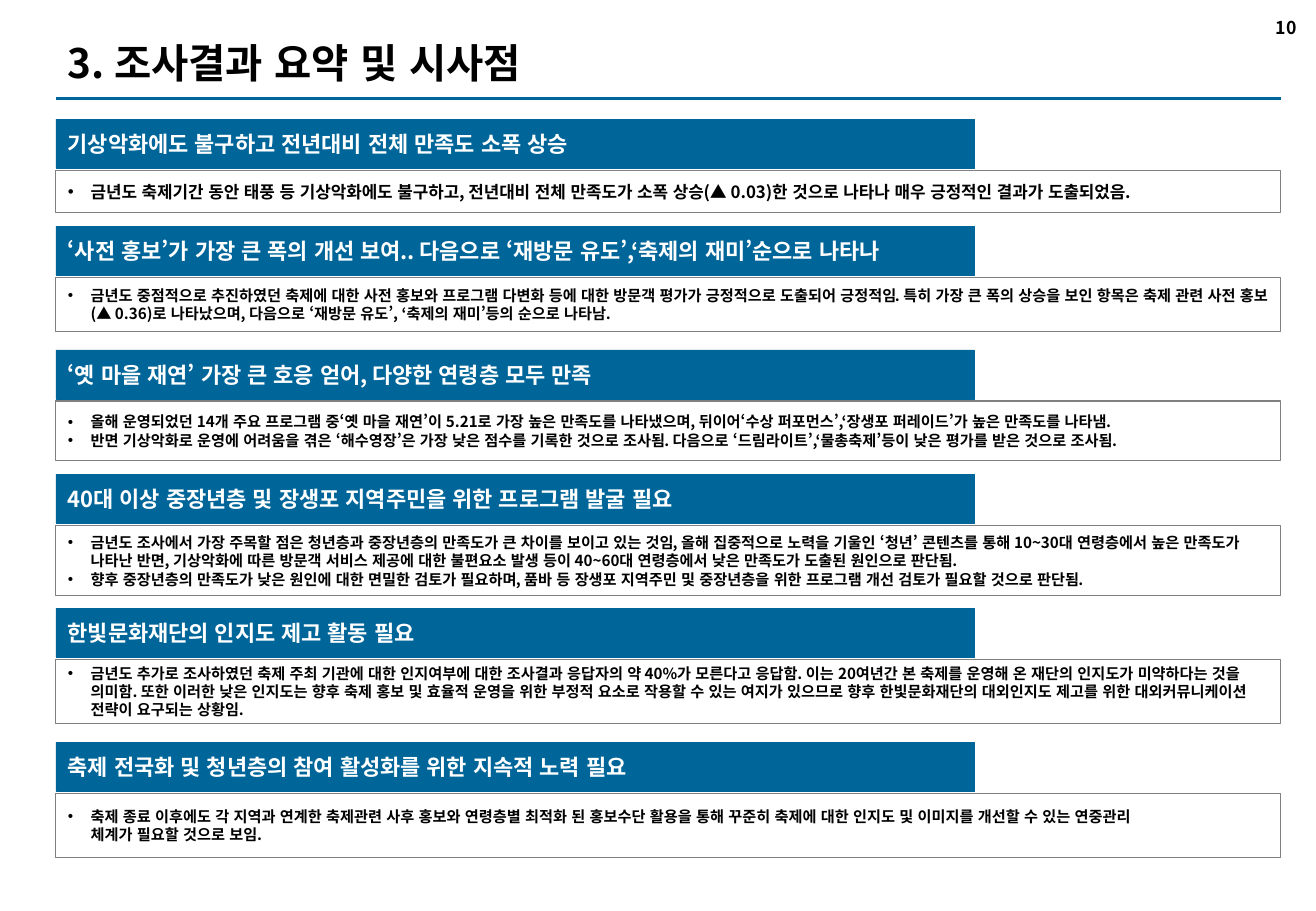
"""Build the survey summary slide with its six findings."""
from dataclasses import dataclass

from lxml import etree
from pptx import Presentation
from pptx.dml.color import RGBColor
from pptx.enum.lang import MSO_LANGUAGE_ID
from pptx.enum.shapes import MSO_CONNECTOR, MSO_SHAPE
from pptx.enum.text import MSO_ANCHOR, PP_ALIGN
from pptx.oxml.ns import qn
from pptx.util import Pt

RECTANGLE = MSO_SHAPE.RECTANGLE
STRAIGHT = MSO_CONNECTOR.STRAIGHT
MIDDLE = MSO_ANCHOR.MIDDLE
LEFT = PP_ALIGN.LEFT
CENTER = PP_ALIGN.CENTER
KOREAN = MSO_LANGUAGE_ID.KOREAN

FONT = "Noto Sans CJK KR"
COLORS = {"blue": "006699", "gray": "808080", "black": "000000", "white": "FFFFFF"}
SLIDE_WIDTH, SLIDE_HEIGHT = 779.8, 540
MARGIN = 33.1
CONTENT_WIDTH = 725.8
HEADING_WIDTH, HEADING_HEIGHT = 544.3, 29.2
BODY_OFFSET = 30.3
BULLET_INDENT = 13.5


@dataclass(frozen=True)
class Finding:
    top: float
    body_height: float
    heading: str
    bullets: tuple[str, ...]
    body_size: float = 9


FINDINGS = (
    Finding(70.7, 25.2, "기상악화에도 불구하고 전년대비 전체 만족도 소폭 상승", (
        "금년도 축제기간 동안 태풍 등 기상악화에도 불구하고, 전년대비 전체 만족도가 소폭 상승"
        "(▲ 0.03)한 것으로 나타나 매우 긍정적인 결과가 도출되었음.",
    ), 10),
    Finding(134, 32.4, "‘사전 홍보’가 가장 큰 폭의 개선 보여.. 다음으로 ‘재방문 유도’,‘축제의 재미’순으로 나타나", (
        "금년도 중점적으로 추진하였던 축제에 대한 사전 홍보와 프로그램 다변화 등에 대한 방문객 평가가 "
        "긍정적으로 도출되어 긍정적임. 특히 가장 큰 폭의 상승을 보인 항목은 축제 관련 사전 "
        "홍보(▲ 0.36)로 나타났으며, 다음으로 ‘재방문 유도’, ‘축제의 재미’등의 순으로 나타남.",
    )),
    Finding(207.4, 35.4, "‘옛 마을 재연’ 가장 큰 호응 얻어, 다양한 연령층 모두 만족", (
        "올해 운영되었던 14개 주요 프로그램 중‘옛 마을 재연’이 5.21로 가장 높은 만족도를 나타냈으며, "
        "뒤이어‘수상 퍼포먼스’,‘장생포 퍼레이드’가 높은 만족도를 나타냄.",
        "반면 기상악화로 운영에 어려움을 겪은 ‘해수영장’은 가장 낮은 점수를 기록한 것으로 조사됨. "
        "다음으로 ‘드림라이트’,‘물총축제’등이 낮은 평가를 받은 것으로 조사됨.",
    )),
    Finding(281.1, 41.8, "40대 이상 중장년층 및 장생포 지역주민을 위한 프로그램 발굴 필요", (
        "금년도 조사에서 가장 주목할 점은 청년층과 중장년층의 만족도가 큰 차이를 보이고 있는 것임, "
        "올해 집중적으로 노력을 기울인 ‘청년’ 콘텐츠를 통해 10~30대 연령층에서 높은 만족도가 "
        "나타난 반면, 기상악화에 따른 방문객 서비스 제공에 대한 불편요소 발생 등이 40~60대 "
        "연령층에서 낮은 만족도가 도출된 원인으로 판단됨.",
        "향후 중장년층의 만족도가 낮은 원인에 대한 면밀한 검토가 필요하며, 품바 등 장생포 지역주민 및 "
        "중장년층을 위한 프로그램 개선 검토가 필요할 것으로 판단됨.",
    )),
    Finding(360.6, 38.2, "한빛문화재단의 인지도 제고 활동 필요", (
        "금년도 추가로 조사하였던 축제 주최 기관에 대한 인지여부에 대한 조사결과 응답자의 약 40%가 "
        "모른다고 응답함. 이는 20여년간 본 축제를 운영해 온 재단의 인지도가 미약하다는 것을 "
        "의미함. 또한 이러한 낮은 인지도는 향후 축제 홍보 및 효율적 운영을 위한 부정적 요소로 작용할 수 "
        "있는 여지가 있으므로 향후 한빛문화재단의 대외인지도 제고를 위한 대외커뮤니케이션 "
        "전략이 요구되는 상황임.",
    )),
    Finding(440, 38.2, "축제 전국화 및 청년층의 참여 활성화를 위한 지속적 노력 필요", (
        "축제 종료 이후에도 각 지역과 연계한 축제관련 사후 홍보와 연령층별 최적화 된 홍보수단 활용을 통해 "
        "꾸준히 축제에 대한 인지도 및 이미지를 개선할 수 있는 연중관리\n체계가 필요할 것으로 보임.",
    )),
)


def color(name: str) -> RGBColor:
    return RGBColor.from_string(COLORS[name])


def add_text(paragraph, text: str, size: float, color_name: str) -> None:
    for index, line in enumerate(text.split("\n")):
        if index:
            paragraph.add_line_break()
        run = paragraph.add_run()
        run.text = line
        run.font.size = Pt(size)
        run.font.bold = True
        run.font.name = FONT
        run.font.language_id = KOREAN
        run.font.color.rgb = color(color_name)
        east_asian = etree.SubElement(run._r.get_or_add_rPr(), qn("a:ea"))
        east_asian.set("typeface", FONT)


def add_bullet(paragraph) -> None:
    properties = paragraph._p.get_or_add_pPr()
    properties.set("marL", str(Pt(BULLET_INDENT)))
    properties.set("indent", str(-Pt(BULLET_INDENT)))
    etree.SubElement(properties, qn("a:buFont")).set("typeface", "Arial")
    etree.SubElement(properties, qn("a:buChar")).set("char", "•")


def add_box(slide, top: float, width: float, height: float, line_name: str, line_width: float):
    shape = slide.shapes.add_shape(RECTANGLE, Pt(MARGIN), Pt(top), Pt(width), Pt(height))
    shape.shadow.inherit = False
    shape.fill.background()
    shape.line.color.rgb = color(line_name)
    shape.line.width = Pt(line_width)
    shape.text_frame.word_wrap = True
    shape.text_frame.vertical_anchor = MIDDLE
    return shape


def add_finding(slide, finding: Finding) -> None:
    body = add_box(slide, finding.top + BODY_OFFSET, CONTENT_WIDTH, finding.body_height, "gray", 0.75)
    frame = body.text_frame
    for index, bullet in enumerate(finding.bullets):
        paragraph = frame.add_paragraph() if index else frame.paragraphs[0]
        paragraph.alignment = LEFT
        add_bullet(paragraph)
        add_text(paragraph, bullet, finding.body_size, "black")

    heading = add_box(slide, finding.top, HEADING_WIDTH, HEADING_HEIGHT, "blue", 0.25)
    heading.fill.solid()
    heading.fill.fore_color.rgb = color("blue")
    paragraph = heading.text_frame.paragraphs[0]
    paragraph.alignment = LEFT
    add_text(paragraph, finding.heading, 13, "white")


def add_title(slide) -> None:
    title = slide.shapes.add_textbox(Pt(MARGIN), Pt(7.9), Pt(617.8), Pt(54.7))
    frame = title.text_frame
    frame.word_wrap = True
    frame.vertical_anchor = MIDDLE
    frame.margin_top = frame.margin_bottom = Pt(7.2)
    frame.paragraphs[0].line_spacing = 1.1
    add_text(frame.paragraphs[0], "3. 조사결과 요약 및 시사점", 24, "black")

    rule = slide.shapes.add_connector(
        STRAIGHT, Pt(MARGIN), Pt(58.3), Pt(MARGIN + CONTENT_WIDTH), Pt(58.3))
    rule.line.color.rgb = color("blue")
    rule.line.width = Pt(1.75)
    etree.SubElement(rule._element.spPr, qn("a:effectLst"))


def add_page_number(slide) -> None:
    number = slide.shapes.add_textbox(Pt(748.1), Pt(6.5), Pt(28.1), Pt(20.2))
    number.text_frame.word_wrap = False
    paragraph = number.text_frame.paragraphs[0]
    paragraph.alignment = CENTER
    add_text(paragraph, "10", 10.5, "black")


def main() -> None:
    presentation = Presentation()
    presentation.slide_width = Pt(SLIDE_WIDTH)
    presentation.slide_height = Pt(SLIDE_HEIGHT)
    slide = presentation.slides.add_slide(presentation.slide_layouts[6])
    add_page_number(slide)
    add_title(slide)
    for finding in FINDINGS:
        add_finding(slide, finding)
    presentation.save("out.pptx")


if __name__ == "__main__":
    main()
